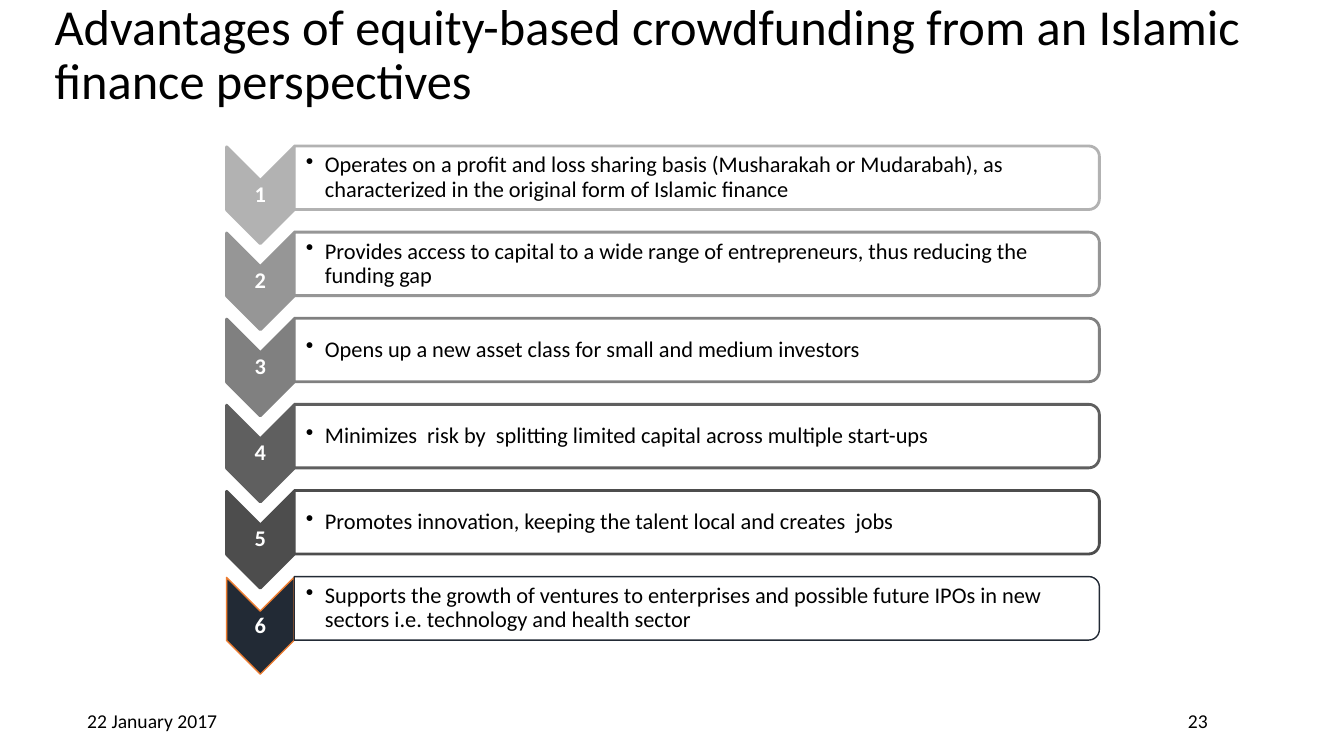
from lxml import etree
from pptx import Presentation
from pptx import util as u
from pptx.dml.color import RGBColor
from pptx.enum import shapes, text
from pptx.oxml.ns import qn

ADVANTAGES = [
    ("B2B2B2", "Operates on a profit and loss sharing basis (Musharakah or Mudarabah), as "
               "characterized in the original form of Islamic finance"),
    ("969696", "Provides access to capital to a wide range of entrepreneurs, thus reducing the funding gap"),
    ("808080", "Opens up a new asset class for small and medium investors"),
    ("5F5F5F", "Minimizes  risk by  splitting limited capital across multiple start-ups"),
    ("4D4D4D", "Promotes innovation, keeping the talent local and creates  jobs"),
    ("222A35", "Supports the growth of ventures to enterprises and possible future IPOs in new "
               "sectors i.e. technology and health sector"),
]
FIRST_ROW, ROW_PITCH = 4.48, 2.17
CHEVRON_X, CHEVRON_DROP = 6.56, 0.44
BAR_X = 17.56


def color(value):
    return RGBColor.from_string(value)


def apply(target, values):
    for name, value in values.items():
        setattr(target, name, value)


class SlideBuilder:
    font_name = "Calibri"
    tight = {"margin_left": u.Cm(0.02), "margin_right": u.Cm(0.02),
             "margin_top": u.Cm(0.02), "margin_bottom": u.Cm(0.02)}

    def __init__(self, presentation):
        self.slide = presentation.slides.add_slide(presentation.slide_layouts[5])

    def fill_text(self, shape, wording, size, fill="000000", bold=False,
                  align=text.PP_ALIGN.LEFT, frame_format=None, bullet=False, line_spacing=0.9):
        frame = shape.text_frame
        apply(frame, {"word_wrap": True, "auto_size": text.MSO_AUTO_SIZE.NONE,
                      "vertical_anchor": text.MSO_ANCHOR.MIDDLE, **(frame_format or {})})
        paragraph = frame.paragraphs[0]
        paragraph.text = wording
        apply(paragraph, {"alignment": align, "line_spacing": line_spacing})
        if bullet:
            properties = paragraph._p.get_or_add_pPr()
            properties.set("marL", str(u.Cm(0.48)))
            properties.set("indent", str(-u.Cm(0.48)))
            etree.SubElement(properties, qn("a:buChar")).set("char", "•")
        apply(paragraph.font, {"name": self.font_name, "size": u.Pt(size), "bold": bold})
        paragraph.font.color.rgb = color(fill)

    def title(self, wording, left, top, width, height):
        shape = self.slide.shapes.title
        apply(shape, {"left": u.Cm(left), "top": u.Cm(top),
                      "width": u.Cm(width), "height": u.Cm(height)})
        self.fill_text(shape, wording, 36)

    def label(self, wording, center_x, center_y, width, height, size, **style):
        shape = self.slide.shapes.add_textbox(
            u.Cm(center_x - width / 2), u.Cm(center_y - height / 2), u.Cm(width), u.Cm(height))
        self.fill_text(shape, wording, size, **style)

    def turned_shape(self, kind, center_x, center_y, length, breadth, fill, line, weight, alpha=100):
        shape = self.slide.shapes.add_shape(
            kind, u.Cm(center_x - length / 2), u.Cm(center_y - breadth / 2),
            u.Cm(length), u.Cm(breadth))
        shape.rotation = 90
        shape.shadow.inherit = False
        shape.fill.solid()
        shape.fill.fore_color.rgb = color(fill)
        shape.line.color.rgb = color(line)
        shape.line.width = u.Pt(weight)
        if alpha < 100:
            fill_color = shape._element.spPr.find(qn("a:solidFill"))[0]
            etree.SubElement(fill_color, qn("a:alpha")).set("val", str(alpha * 1000))

    def advantage(self, number, wording, shade, outline, weight, center_y):
        chevron_y = center_y + CHEVRON_DROP
        self.turned_shape(shapes.MSO_SHAPE.CHEVRON, CHEVRON_X, chevron_y, 2.44, 1.7,
                          shade, outline, weight)
        self.label(str(number), CHEVRON_X, chevron_y, 1.7, 0.74, 16, fill="FFFFFF", bold=True,
                   align=text.PP_ALIGN.CENTER, frame_format=self.tight)
        self.turned_shape(shapes.MSO_SHAPE.ROUND_2_SAME_RECTANGLE, BAR_X, center_y, 1.6, 20.29,
                          "FFFFFF", shade, weight, alpha=90)
        self.label(wording, BAR_X - 0.04, center_y, 20.22, 1.42, 16, bullet=True,
                   frame_format={**self.tight, "margin_left": u.Cm(0.3)})


def main():
    presentation = Presentation()
    apply(presentation, {"slide_width": u.Cm(33.87), "slide_height": u.Cm(19.05)})
    builder = SlideBuilder(presentation)
    builder.title("Advantages of equity-based crowdfunding from an Islamic finance perspectives",
                  1.12, 0.05, 30.89, 2.74)
    for wording, center_x, width in (("22 January 2017", 3.84, 7.62), ("23", 30.19, 7.29)):
        builder.label(wording, center_x, 18.16, width, 1.02, 14,
                      align=text.PP_ALIGN.CENTER, line_spacing=1.0)
    for index, (shade, wording) in enumerate(ADVANTAGES):
        last = index == len(ADVANTAGES) - 1
        builder.advantage(index + 1, wording, shade, "ED7D31" if last else shade,
                          1 if last else 2, FIRST_ROW + index * ROW_PITCH)
    presentation.save("out.pptx")


if __name__ == "__main__":
    main()
